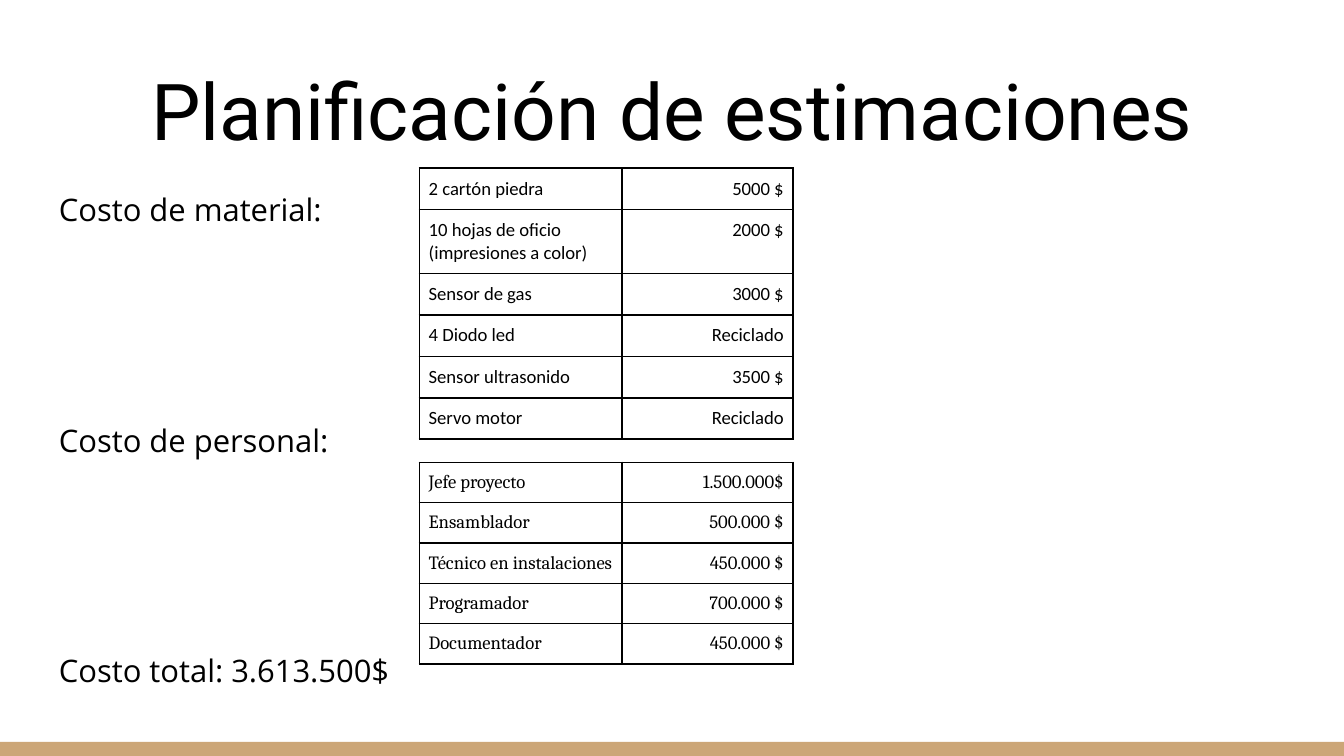
from lxml import etree
from pptx import Presentation
from pptx.dml.color import RGBColor
from pptx.enum.shapes import MSO_SHAPE
from pptx.enum.text import MSO_ANCHOR, MSO_AUTO_SIZE, PP_ALIGN
from pptx.oxml.ns import qn
from pptx.util import Inches, Pt

LEFT, CENTER, RIGHT = PP_ALIGN.LEFT, PP_ALIGN.CENTER, PP_ALIGN.RIGHT
TOP, BOTTOM = MSO_ANCHOR.TOP, MSO_ANCHOR.BOTTOM
RECTANGLE = MSO_SHAPE.RECTANGLE
NO_AUTOFIT = MSO_AUTO_SIZE.NONE
TITLE_ONLY = 5

MATERIALS = [
    ("2 cartón piedra", "5000 $"),
    ("10 hojas de oficio (impresiones a color)", "2000 $"),
    ("Sensor de gas", "3000 $"),
    ("4 Diodo led", "Reciclado"),
    ("Sensor ultrasonido", "3500 $"),
    ("Servo motor", "Reciclado"),
]
STAFF = [
    ("Jefe proyecto", "1.500.000$"),
    ("Ensamblador", "500.000 $"),
    ("Técnico en instalaciones", "450.000 $"),
    ("Programador", "700.000 $"),
    ("Documentador", "450.000 $"),
]
COSTS = ["Costo de material:", "Costo de personal:", "Costo total: 3.613.500$"]


def color(value):
    return RGBColor.from_string(value)


def write(paragraph, text, font, size, ink, align=LEFT, before=0, spacing=1.0):
    paragraph.alignment = align
    paragraph.space_before = Pt(before)
    paragraph.line_spacing = spacing
    run = paragraph.add_run()
    run.text = text
    run.font.name = font
    run.font.size = Pt(size)
    run.font.color.rgb = color(ink)


class SlideBuilder:
    ink = "000000"
    accent = "CCA677"
    title_font = "Roboto"
    body_font = "Open Sans"
    column_widths = (1.51, 1.27)
    row_height = 0.3
    cell_margin = 0.07

    def __init__(self, slide):
        self.slide = slide

    def background(self, fill):
        self.slide.background.fill.solid()
        self.slide.background.fill.fore_color.rgb = color(fill)

    def bar(self, left, top, width, height):
        shape = self.slide.shapes.add_shape(
            RECTANGLE, Inches(left), Inches(top), Inches(width), Inches(height))
        shape.shadow.inherit = False
        shape.fill.solid()
        shape.fill.fore_color.rgb = color(self.accent)
        shape.line.fill.background()

    def frame(self, shape, anchor):
        text_frame = shape.text_frame
        text_frame.word_wrap = True
        text_frame.auto_size = NO_AUTOFIT
        text_frame.vertical_anchor = anchor
        text_frame.margin_left = text_frame.margin_right = Inches(0.1)
        text_frame.margin_top = text_frame.margin_bottom = Inches(0.1)
        return text_frame

    def title(self, text, left, top, width, height):
        shape = self.slide.shapes.title
        shape.left, shape.top = Inches(left), Inches(top)
        shape.width, shape.height = Inches(width), Inches(height)
        text_frame = self.frame(shape, BOTTOM)
        write(text_frame.paragraphs[0], text, font=self.title_font, size=42,
              ink=self.ink, align=CENTER)

    def body(self, lines, left, top, width, height, gap):
        shape = self.slide.shapes.add_textbox(
            Inches(left), Inches(top), Inches(width), Inches(height))
        text_frame = self.frame(shape, TOP)
        for index, line in enumerate(lines):
            paragraph = text_frame.add_paragraph() if index else text_frame.paragraphs[0]
            write(paragraph, line, font=self.body_font, size=16.6, ink=self.ink,
                  before=gap if index else 0, spacing=0.95)

    def borders(self, cell):
        properties = cell._tc.get_or_add_tcPr()
        for side in ("a:lnL", "a:lnR", "a:lnT", "a:lnB"):
            line = etree.SubElement(properties, qn(side), w=str(Pt(1)))
            fill = etree.SubElement(line, qn("a:solidFill"))
            etree.SubElement(fill, qn("a:srgbClr"), val=self.ink)

    def table(self, rows, left, top, font, tall_rows=None):
        tall_rows = tall_rows or {}
        heights = [tall_rows.get(index, self.row_height) for index in range(len(rows))]
        table = self.slide.shapes.add_table(
            len(rows), len(self.column_widths), Inches(left), Inches(top),
            Inches(sum(self.column_widths)), Inches(sum(heights))).table
        table.first_row = table.horz_banding = False
        for column, width in zip(table.columns, self.column_widths):
            column.width = Inches(width)
        for row, height, texts in zip(table.rows, heights, rows):
            row.height = Inches(height)
            for cell, text, align in zip(row.cells, texts, (LEFT, RIGHT)):
                self.borders(cell)
                cell.fill.background()
                cell.margin_left = cell.margin_right = Inches(self.cell_margin)
                cell.margin_top = cell.margin_bottom = Inches(self.cell_margin)
                write(cell.text_frame.paragraphs[0], text, font=font, size=10,
                      ink=self.ink, align=align)


def main():
    presentation = Presentation()
    presentation.slide_width = Inches(10)
    presentation.slide_height = Inches(10 * 9 / 16)
    slide = presentation.slides.add_slide(presentation.slide_layouts[TITLE_ONLY])
    builder = SlideBuilder(slide)
    builder.background("FFFFFF")
    builder.bar(0, 5.52, 10, 0.11)
    builder.title("Planificación de estimaciones", 0.34, 0.35, 9.32, 0.91)
    builder.body(COSTS, 0.34, 1.34, 9.32, 3.96, gap=104.5)
    builder.table(STAFF, 3.12, 3.44, "Cambria")
    builder.table(MATERIALS, 3.12, 1.25, "Calibri", tall_rows={1: 0.45})
    presentation.save("out.pptx")


if __name__ == "__main__":
    main()
